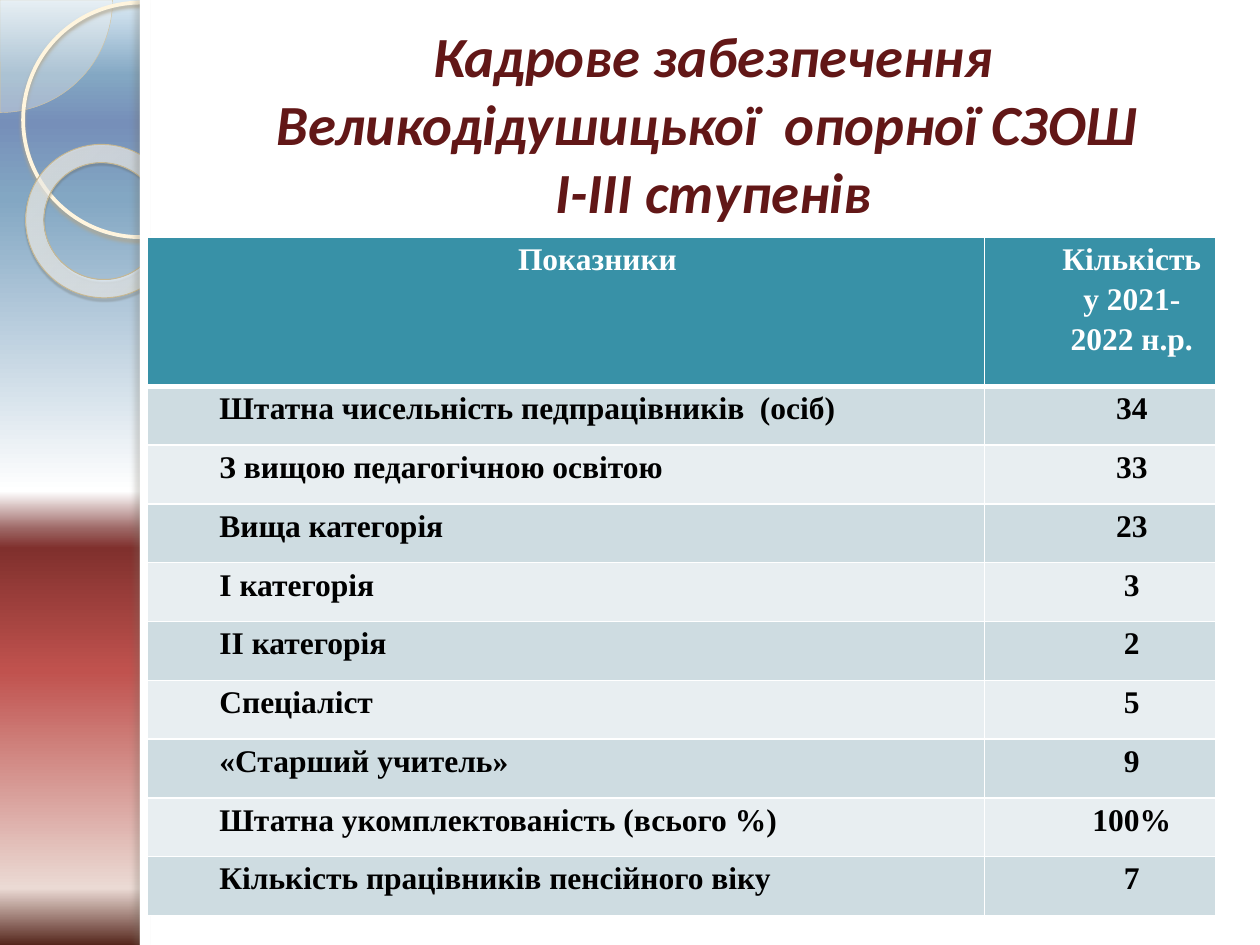
from lxml.etree import SubElement
from pptx import Presentation
from pptx.dml.color import RGBColor
from pptx.enum.shapes import MSO_SHAPE as Shape
from pptx.enum.text import MSO_ANCHOR as Anchor, PP_ALIGN as Align
from pptx.oxml.ns import qn
from pptx.util import Pt

WHITE = RGBColor(0xFF, 0xFF, 0xFF)
BLACK = RGBColor(0x00, 0x00, 0x00)
MAROON = RGBColor(0x62, 0x17, 0x17)
TEAL = RGBColor(0x38, 0x91, 0xA7)
BAND_DARK = RGBColor(0xCE, 0xDC, 0xE1)
BAND_LIGHT = RGBColor(0xE8, 0xEE, 0xF1)
CREAM = RGBColor(0xFE, 0xFA, 0xF4)
PIE_LINE = RGBColor(0xD3, 0xC3, 0x9F)
RING_LINE = RGBColor(0xFF, 0xF5, 0xDE)
RING_SHADOW = RGBColor(0xB0, 0xA6, 0x8F)
DONUT_LINE = RGBColor(0xC7, 0xB8, 0x93)
DONUT_SHADOW = RGBColor(0x5A, 0x54, 0x44)
EDGE_SHADOW = RGBColor(0x73, 0x6F, 0x63)

# Stops are (position %, colour, opacity %).
SKY_STOPS = [(position, RGBColor.from_string(colour), 100) for position, colour in [
    (0, "DCEBF5"), (8, "83A7C3"), (13, "768FB9"), (21, "83A7C3"), (52, "FFFFFF"),
    (56, "9C6563"), (58, "80302D"), (71, "C0524E"), (94, "EBDAD4"), (100, "55261C")]]
DONUT_STOPS = [(0, RGBColor(0xFF, 0xFC, 0xF6), 70),
               (70, RGBColor(0xFF, 0xFE, 0xFB), 55),
               (100, RGBColor(0xF0, 0xD2, 0x8E), 60)]

TITLE = "Кадрове забезпечення Великодідушицької  опорної СЗОШ \vІ-ІІІ ступенів"
HEADER = ("Показники", "Кількість у 2021-2022 н.р.")
STAFF = [
    ("Штатна чисельність педпрацівників  (осіб)", "34"),
    ("З вищою педагогічною освітою", "33"),
    ("Вища категорія", "23"),
    ("І категорія", "3"),
    ("ІІ категорія", "2"),
    ("Спеціаліст", "5"),
    ("«Старший учитель»", "9"),
    ("Штатна укомплектованість (всього %)", "100%"),
    ("Кількість працівників пенсійного віку", "7"),
]


def add_child(parent, tag, **attributes):
    return SubElement(parent, qn(tag), {key: str(value) for key, value in attributes.items()})


def add_colour(parent, colour, opacity=100):
    element = add_child(parent, "a:srgbClr", val=colour)
    if opacity < 100:
        add_child(element, "a:alpha", val=opacity * 1000)


def set_gradient(fill, owner, stops, focus=None):
    """Fill from top to bottom, or in circles around the focus rectangle (percent)."""
    fill.gradient()
    gradient = owner.find(".//" + qn("a:gradFill"))
    for child in list(gradient):
        gradient.remove(child)
    stop_list = add_child(gradient, "a:gsLst")
    for position, colour, opacity in stops:
        add_colour(add_child(stop_list, "a:gs", pos=position * 1000), colour, opacity)
    if focus:
        sides = {side: value * 1000 for side, value in zip("ltrb", focus)}
        add_child(add_child(gradient, "a:path", path="circle"), "a:fillToRect", **sides)
    else:
        add_child(gradient, "a:lin", ang=90 * 60000, scaled=0)


def add_plain_shape(slide, kind, box, fill=None, opacity=100, line=None, width=0, shadow=None):
    """Shadow is (colour, opacity %, blur, distance, angle)."""
    shape = slide.shapes.add_shape(kind, *map(Pt, box))
    shape.shadow.inherit = False
    if fill is None:
        shape.fill.background()
    else:
        shape.fill.solid()
        shape.fill.fore_color.rgb = fill
        if opacity < 100:
            colour = shape.element.spPr.find(qn("a:solidFill"))[0]
            add_child(colour, "a:alpha", val=opacity * 1000)
    if line is None:
        shape.line.fill.background()
    else:
        shape.line.color.rgb = line
        shape.line.width = Pt(width)
    if shadow:
        colour, strength, blur, distance, angle = shadow
        effects = shape.element.spPr.find(qn("a:effectLst"))
        outer = add_child(effects, "a:outerShdw", blurRad=Pt(blur), dist=Pt(distance),
                          dir=angle * 60000, algn="tl", rotWithShape=0)
        add_colour(outer, colour, strength)
    return shape


def add_side_ornament(slide, left, top):
    pie = add_plain_shape(slide, Shape.PIE, (left - 64.3, top - 64.3, 128.6, 128.6),
                          fill=CREAM, opacity=33, line=PIE_LINE, width=0.25)
    pie.adjustments[0] = 0
    pie.adjustments[1] = 54
    add_plain_shape(slide, Shape.OVAL, (left + 13.2, top + 1.5, 134, 134),
                    line=RING_LINE, width=2.15, shadow=(RING_SHADOW, 85, 2, 2, 90))
    donut = add_plain_shape(slide, Shape.DONUT, (left + 14.4, top + 82.8, 88.6, 87.1),
                            line=DONUT_LINE, width=0.58, shadow=(DONUT_SHADOW, 35, 1, 1.2, 75))
    donut.rotation = 38.6
    donut.adjustments[0] = 0.12
    set_gradient(donut.fill, donut.element, DONUT_STOPS, focus=(-408, -50, 508, 150))


def add_content_panel(slide, left, top, width, height):
    add_plain_shape(slide, Shape.RECTANGLE, (left, top, width, height), fill=WHITE)
    add_plain_shape(slide, Shape.RECTANGLE, (left, top, 5.8, height), fill=WHITE,
                    shadow=(EDGE_SHADOW, 25, 3, 3, 180))


def write_text(frame, text, size, font, colour, align=Align.LEFT, italic=False,
               spacing=1.0, indent=0):
    frame.word_wrap = True
    frame.text = text
    paragraph = frame.paragraphs[0]
    paragraph.alignment = align
    paragraph.line_spacing = spacing
    if indent:
        paragraph._p.get_or_add_pPr().set("marL", str(Pt(indent)))
    for run in paragraph.runs:
        run.font.size, run.font.name = Pt(size), font
        run.font.bold, run.font.italic = True, italic
        run.font.color.rgb = colour


def add_title(slide, left, top, width, height):
    frame = slide.shapes.add_textbox(*map(Pt, (left, top, width, height))).text_frame
    frame.vertical_anchor = Anchor.MIDDLE
    frame.margin_bottom = Pt(26)
    write_text(frame, TITLE, 32.4, "Calibri", MAROON, align=Align.CENTER, italic=True)


def set_borders(cell, **widths):
    properties = cell._tc.get_or_add_tcPr()
    for side in "LRTB":
        line = add_child(properties, "a:ln" + side, w=Pt(widths.get(side, 1)))
        add_colour(add_child(line, "a:solidFill"), WHITE)


def add_staff_table(slide, left, top, width, height):
    rows = [HEADER] + STAFF
    header_height, value_width = 85.4, 132.5
    table = slide.shapes.add_table(len(rows), 2, *map(Pt, (left, top, width, height))).table
    table.columns[0].width = Pt(width - value_width)
    table.columns[1].width = Pt(value_width)
    row_height = (height - header_height) / len(STAFF)
    for row, texts in enumerate(rows):
        is_header = row == 0
        table.rows[row].height = Pt(header_height if is_header else row_height)
        band = TEAL if is_header else BAND_DARK if row % 2 else BAND_LIGHT
        for column, text in enumerate(texts):
            cell = table.cell(row, column)
            set_borders(cell, T=3 if row == 1 else 1, B=3 if is_header else 1)
            cell.fill.solid()
            cell.fill.fore_color.rgb = band
            cell.margin_left = cell.margin_right = Pt(5)
            cell.margin_top = cell.margin_bottom = 0
            write_text(cell.text_frame, text, 18, "Times New Roman",
                       WHITE if is_header else BLACK, spacing=1.15, indent=36,
                       align=Align.CENTER if is_header or column else Align.LEFT)


def main():
    presentation = Presentation()
    presentation.slide_width, presentation.slide_height = Pt(720), Pt(540)
    slide = presentation.slides.add_slide(presentation.slide_layouts[6])
    set_gradient(slide.background.fill, slide.element, SKY_STOPS)
    add_side_ornament(slide, 0, 0)
    add_content_panel(slide, 80, 0, 640, 540)
    add_title(slide, 112.5, 28, 590.5, 106.5)
    add_staff_table(slide, 84.4, 135.4, 610.6, 387.8)
    presentation.save("out.pptx")


if __name__ == "__main__":
    main()
